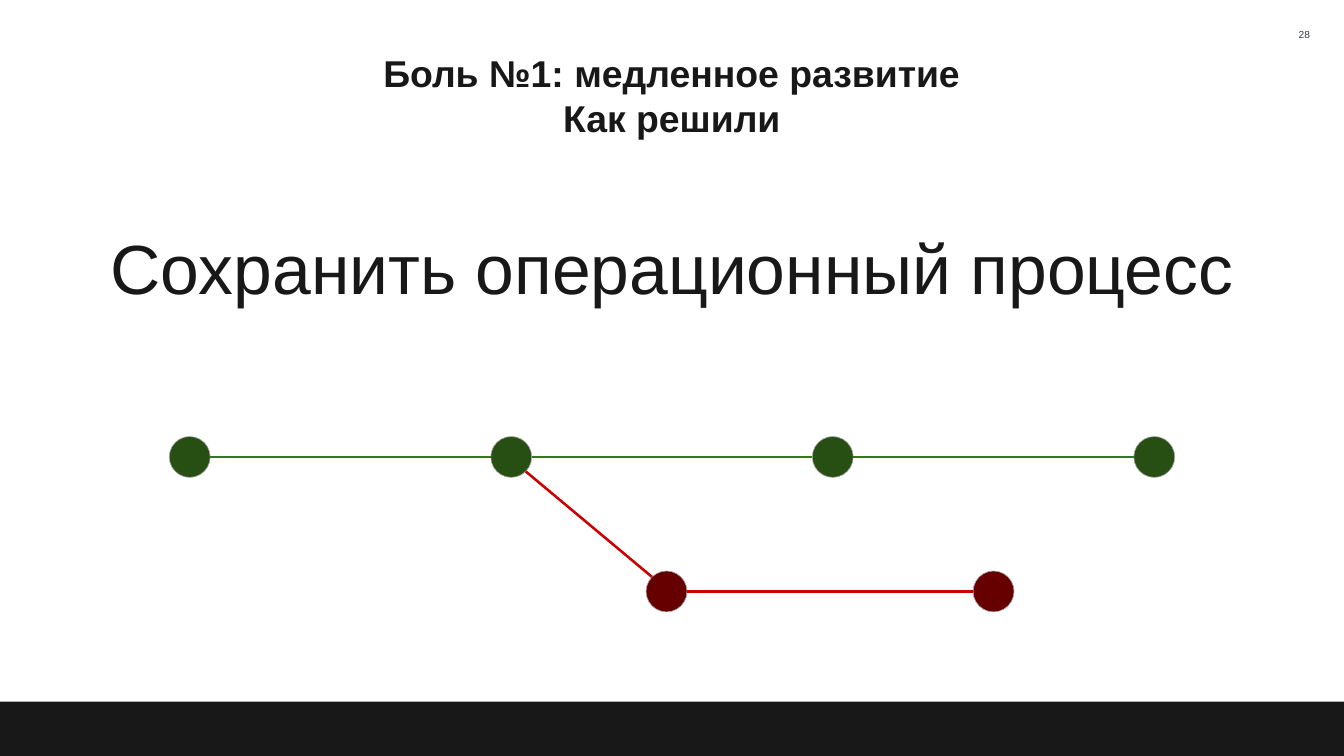
from lxml.etree import SubElement
from pptx import Presentation
from pptx.dml.color import RGBColor
from pptx.enum.shapes import MSO_CONNECTOR, MSO_SHAPE
from pptx.enum.text import MSO_ANCHOR, MSO_AUTO_SIZE, PP_ALIGN
from pptx.oxml.ns import qn
from pptx.util import Pt

COLORS = {
    "ink": "181818",
    "page_number": "323C4B",
    "green_node": "274E13",
    "green_line": "38761D",
    "red_node": "660000",
    "red_line": "CC0000",
    "outline": "A7A7A7",
}
SLIDE_WIDTH, SLIDE_HEIGHT = 1583, 891
BAR_TOP = 827
NODE_SIZE = 48.2
GREEN_LEFTS = [199.4 + 378.7 * step for step in range(4)]
GREEN_TOP = 514.5
RED_LEFTS = [761, 1146.2]
RED_TOP = 673


def color(name):
    return RGBColor.from_string(COLORS[name])


def write_text(box, text, size, color_name="ink", bold=False, align=PP_ALIGN.CENTER,
               anchor=MSO_ANCHOR.TOP, inset=3.6, line_spacing=1):
    frame = box.text_frame
    frame.word_wrap = True
    frame.auto_size = MSO_AUTO_SIZE.NONE
    frame.vertical_anchor = anchor
    frame.margin_left = frame.margin_right = Pt(inset)
    frame.margin_top = frame.margin_bottom = Pt(inset)
    para = frame.paragraphs[0]
    para.text = text
    para.alignment = align
    para.line_spacing = line_spacing
    para.space_before = Pt(0)
    for span in para.runs:
        span.font.name = "Arial"
        span.font.size = Pt(size)
        span.font.bold = bold
        span.font.color.rgb = color(color_name)


def place(box, left, top, width, height):
    box.left, box.top = Pt(left), Pt(top)
    box.width, box.height = Pt(width), Pt(height)


def add_text(page, text, left, top, width, height, **text_format):
    box = page.shapes.add_textbox(Pt(left), Pt(top), Pt(width), Pt(height))
    write_text(box, text, **text_format)


def add_filled(page, kind, left, top, width, height, fill, outline=None):
    shape = page.shapes.add_shape(kind, Pt(left), Pt(top), Pt(width), Pt(height))
    shape.shadow.inherit = False
    shape.fill.solid()
    shape.fill.fore_color.rgb = color(fill)
    if outline:
        shape.line.color.rgb = color(outline)
        shape.line.width = Pt(0.75)
    else:
        shape.line.fill.background()


def add_line(page, start, end, color_name):
    line = page.shapes.add_connector(MSO_CONNECTOR.STRAIGHT, *map(Pt, start + end))
    line.line.color.rgb = color(color_name)
    line.line.width = Pt(3)
    SubElement(line._element.spPr, qn("a:effectLst"))


def add_branch(page, lefts, top, node_color, line_color):
    """Draw a row of round nodes with a line between each pair of neighbours."""
    for left in lefts:
        add_filled(page, MSO_SHAPE.FLOWCHART_CONNECTOR, left, top,
                   NODE_SIZE, NODE_SIZE, node_color, "outline")
    middle = top + NODE_SIZE / 2
    for left, following in zip(lefts, lefts[1:]):
        add_line(page, (left + NODE_SIZE, middle), (following, middle), line_color)


def add_fork(page):
    """Join the second green node's lower right to the first red node's upper left."""
    corner = NODE_SIZE / 2 * (1 - 0.5 ** 0.5)
    far_corner = NODE_SIZE - corner
    add_line(page, (GREEN_LEFTS[1] + far_corner, GREEN_TOP + far_corner),
             (RED_LEFTS[0] + corner, RED_TOP + corner), "red_line")


def main():
    deck = Presentation()
    deck.slide_width, deck.slide_height = Pt(SLIDE_WIDTH), Pt(SLIDE_HEIGHT)
    page = deck.slides.add_slide(deck.slide_layouts[5])

    title = page.shapes.title
    place(title, 132.7, 55.4, 1317.6, 113)
    write_text(title, "Боль №1: медленное развитие\vКак решили", size=44, bold=True)

    add_filled(page, MSO_SHAPE.RECTANGLE, 0, BAR_TOP, SLIDE_WIDTH,
               SLIDE_HEIGHT - BAR_TOP, "ink")
    add_text(page, "Сохранить операционный процесс", 0, 218.9, SLIDE_WIDTH, 167.8,
             size=82, inset=0, line_spacing=1.47)
    add_text(page, "28", 1524.2, 29.5, 22.3, 22.3, size=12,
             color_name="page_number", align=PP_ALIGN.RIGHT, anchor=MSO_ANCHOR.MIDDLE)

    add_branch(page, GREEN_LEFTS, GREEN_TOP, "green_node", "green_line")
    add_branch(page, RED_LEFTS, RED_TOP, "red_node", "red_line")
    add_fork(page)
    deck.save("out.pptx")


if __name__ == "__main__":
    main()
